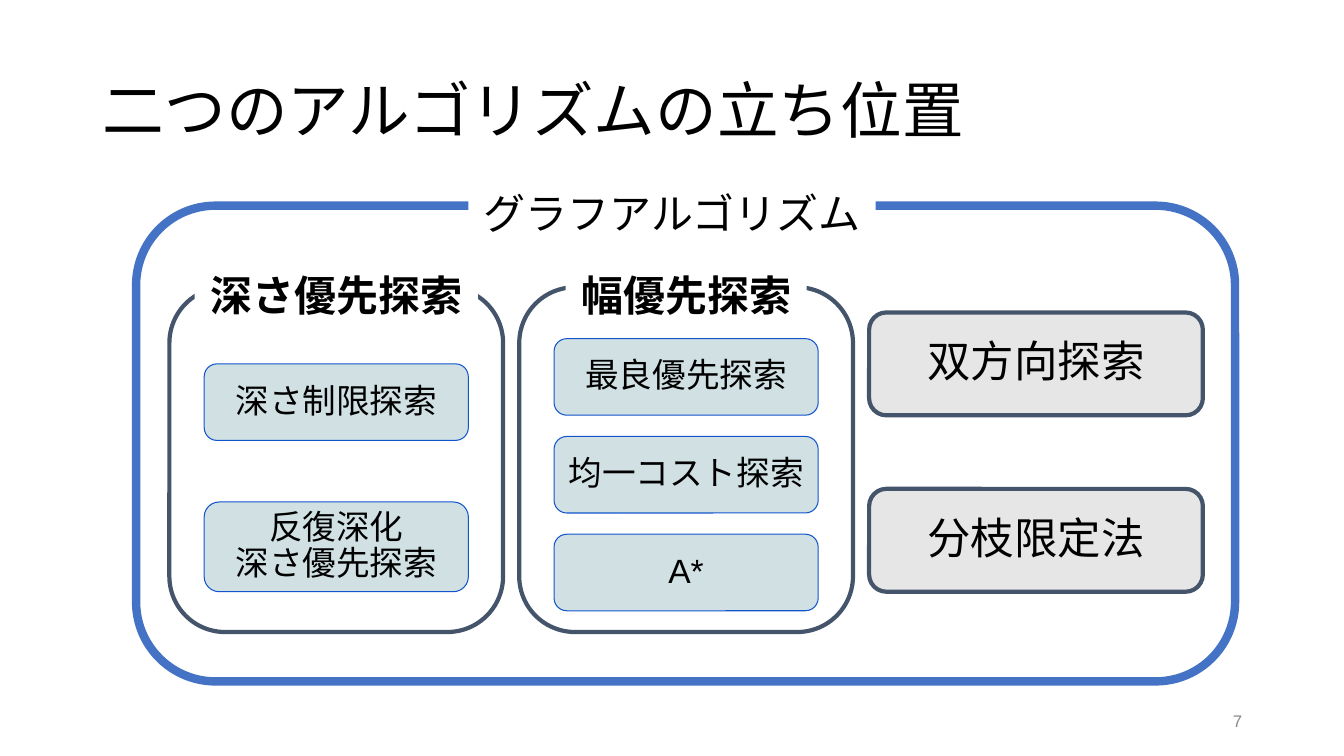
from pptx import Presentation
from pptx import util as u
from pptx.dml.color import RGBColor
from pptx.enum import shapes, text

BLACK = RGBColor(0x00, 0x00, 0x00)
WHITE = RGBColor(0xFF, 0xFF, 0xFF)
GREY = RGBColor(0x88, 0x88, 0x88)
BLUE = RGBColor(0x44, 0x72, 0xC4)
SLATE = RGBColor(0x44, 0x54, 0x6A)
SILVER = RGBColor(0xE7, 0xE6, 0xE6)
PALE_TEAL = RGBColor(0xD0, 0xE0, 0xE3)
EDGE_BLUE = RGBColor(0x11, 0x55, 0xCC)

SLIDE_W, SLIDE_H = 13.33, 7.5
OUTER = (1.35, 2.04, 10.9, 4.72)
COLUMN_LEFT, COLUMN_PITCH, COLUMN_W = 1.68, 3.47, 3.31
GROUP_TOP, GROUP_H = 2.85, 3.42
ITEM_W, ITEM_H = 2.62, 0.76
CAPTION_H, CAPTION_RISE = 0.59, 0.28


def write(frame, words, size, color=BLACK, bold=False, align=text.PP_ALIGN.CENTER,
          anchor=text.MSO_ANCHOR.MIDDLE, spacing=None, inset=0.05):
    """Put one formatted paragraph into a text frame."""
    frame.word_wrap = True
    frame.auto_size = text.MSO_AUTO_SIZE.NONE
    frame.vertical_anchor = anchor
    frame.margin_left = frame.margin_right = u.Inches(0.1)
    frame.margin_top = frame.margin_bottom = u.Inches(inset)
    paragraph = frame.paragraphs[0]
    paragraph.text = words
    paragraph.alignment = align
    paragraph.line_spacing = spacing
    for run in paragraph.runs:
        run.font.name = "Arial"
        run.font.size = u.Pt(size)
        run.font.bold = bold
        run.font.color.rgb = color


def panel(slide, box, fill=None, line=None, width=0, rounded=True):
    """Draw a plain or rounded rectangle in the box."""
    kind = shapes.MSO_SHAPE.ROUNDED_RECTANGLE if rounded else shapes.MSO_SHAPE.RECTANGLE
    frame = slide.shapes.add_shape(kind, *map(u.Inches, box))
    frame.shadow.inherit = False
    if rounded:
        frame.adjustments[0] = 0.167
    if fill is None:
        frame.fill.background()
    else:
        frame.fill.solid()
        frame.fill.fore_color.rgb = fill
    if line is None:
        frame.line.fill.background()
    else:
        frame.line.color.rgb = line
        frame.line.width = u.Pt(width)
    return frame


def caption(slide, words, center, border_top, width, bold=False):
    """Set a heading over the top border of a frame."""
    box = (center - width / 2, border_top - CAPTION_RISE, width, CAPTION_H)
    heading = panel(slide, box, fill=WHITE, rounded=False)
    write(heading.text_frame, words, 30, bold=bold, anchor=text.MSO_ANCHOR.TOP, inset=0.1)


def label(slide, box, words, size, fill, line, width):
    """Draw a rounded box holding the name of an algorithm."""
    algorithm = panel(slide, box, fill, line, width)
    write(algorithm.text_frame, words, size, spacing=0.9, inset=0.1)
    algorithm.text_frame.paragraphs[0].space_before = u.Pt(10)


def search_group(slide, box, heading, heading_w, variants):
    """Draw a search family with its variants, each given as words, top and height."""
    left, top, width, _ = box
    panel(slide, box, WHITE, SLATE, 3)
    caption(slide, heading, left + width / 2, top, heading_w, bold=True)
    for words, offset, height in variants:
        variant_box = (left + (width - ITEM_W) / 2, top + offset, ITEM_W, height)
        label(slide, variant_box, words, 24, PALE_TEAL, EDGE_BLUE, 0.75)


def standalone_searches(slide, left, width):
    """Draw the algorithms outside the two families."""
    for row, words in enumerate(("双方向探索", "分枝限定法")):
        label(slide, (left, 3.1 + 1.75 * row, width, 1.02), words, 31, SILVER, SLATE, 3)


def heading_and_number(slide):
    """Fill the title and add the page number."""
    title = slide.shapes.title
    title.left, title.top, title.width, title.height = map(u.Inches, (0.92, 0.4, 11.5, 1.45))
    write(title.text_frame, "二つのアルゴリズムの立ち位置", 44,
          align=text.PP_ALIGN.LEFT, spacing=0.9)
    number = slide.shapes.add_textbox(*map(u.Inches, (9.42, 6.95, 3, 0.4)))
    write(number.text_frame, "7", 12, GREY, align=text.PP_ALIGN.RIGHT)


def algorithm_map(slide):
    """Draw the frame of graph algorithms and its three columns."""
    panel(slide, OUTER, line=BLUE, width=6)
    caption(slide, "グラフアルゴリズム", SLIDE_W / 2, OUTER[1], 4.04)
    depth, breadth, others = (COLUMN_LEFT + COLUMN_PITCH * i for i in range(3))
    search_group(slide, (depth, GROUP_TOP, COLUMN_W, GROUP_H), "深さ優先探索", 2.81,
                 [("深さ制限探索", 0.76, ITEM_H), ("反復深化\n深さ優先探索", 2.13, 0.89)])
    names = ("最良優先探索", "均一コスト探索", "A*")
    search_group(slide, (breadth, GROUP_TOP, COLUMN_W, GROUP_H), "幅優先探索", 2.39,
                 [(name, 0.51 + 0.97 * row, ITEM_H) for row, name in enumerate(names)])
    standalone_searches(slide, others, COLUMN_W)


def main():
    """Build and save the slide."""
    deck = Presentation()
    deck.slide_width, deck.slide_height = u.Inches(SLIDE_W), u.Inches(SLIDE_H)
    slide = deck.slides.add_slide(deck.slide_layouts[5])
    heading_and_number(slide)
    algorithm_map(slide)
    deck.save("out.pptx")


if __name__ == "__main__":
    main()
